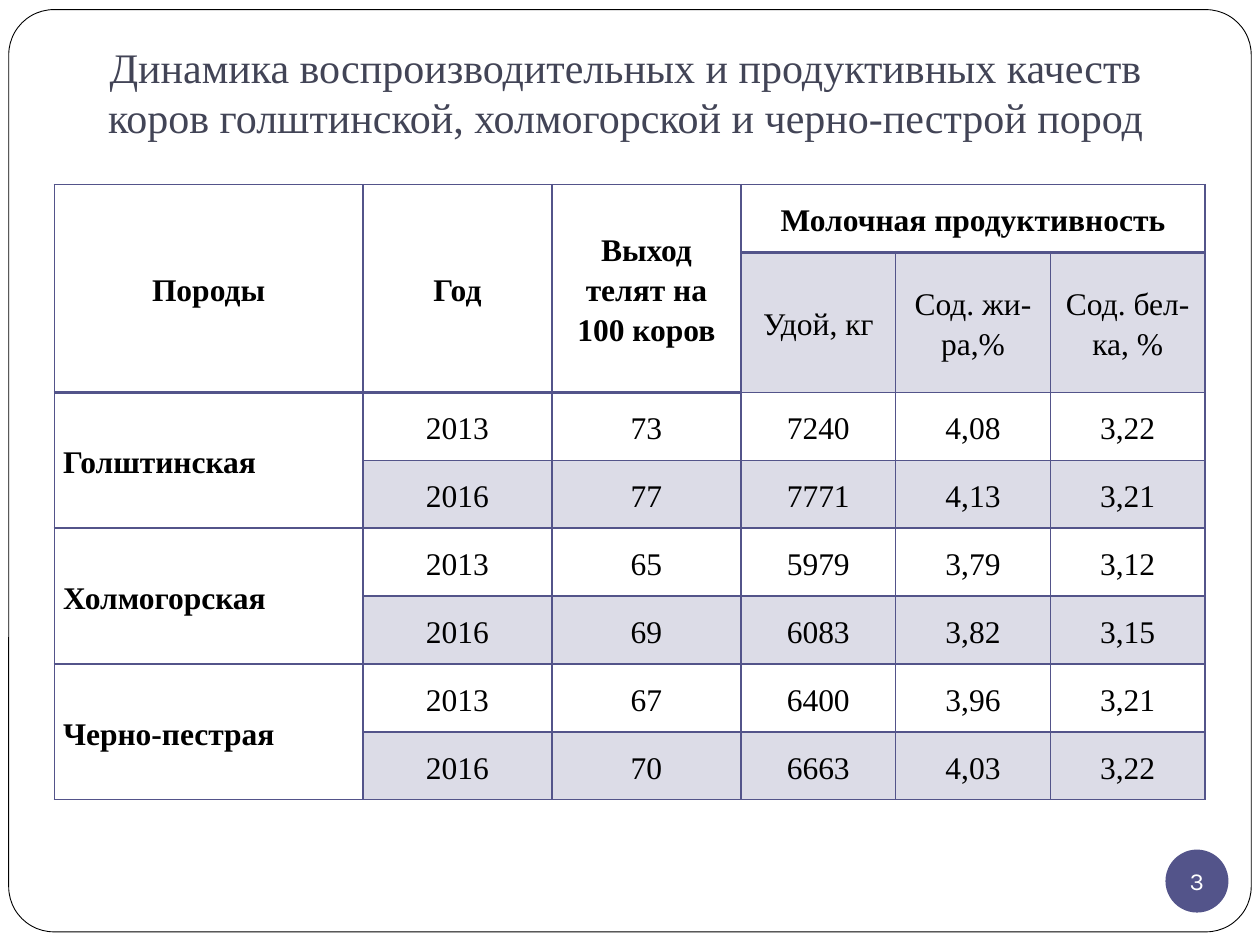
import pptx
import pptx.dml.color
import pptx.enum.shapes
import pptx.enum.text
import pptx.oxml.ns
import pptx.util
import lxml.etree

Pt = pptx.util.Pt
RGB = pptx.dml.color.RGBColor.from_string
ALIGN = pptx.enum.text.PP_ALIGN
ANCHOR = pptx.enum.text.MSO_ANCHOR
SHAPE = pptx.enum.shapes.MSO_SHAPE
qn = pptx.oxml.ns.qn

THEME = {
    "accent": "53548A", "title": "424456", "text": "000000", "paper": "FFFFFF",
    "serif": "Times New Roman", "number_font": "Karla",
    "title_size": 24, "table_size": 18, "number_size": 14,
    "band_alpha": 20, "thin": 1, "thick": 2,
}


def style(paragraph, font, size, color, align, bold=False):
    paragraph.alignment = align
    paragraph.font.name = THEME[font]
    paragraph.font.size = Pt(THEME[size])
    paragraph.font.color.rgb = RGB(THEME[color])
    paragraph.font.bold = bold


def add_border(cell, side, width):
    line = lxml.etree.SubElement(cell._tc.get_or_add_tcPr(), qn("a:" + side), w=str(Pt(width)))
    fill = lxml.etree.SubElement(line, qn("a:solidFill"))
    lxml.etree.SubElement(fill, qn("a:srgbClr"), val=THEME["accent"])


deck = pptx.Presentation()
deck.slide_width, deck.slide_height = Pt(720), Pt(540)
slide = deck.slides.add_slide(deck.slide_layouts[5])

# Rounded page frame, behind everything
frame = slide.shapes.add_shape(SHAPE.ROUNDED_RECTANGLE, Pt(5), Pt(5.5), Pt(710), Pt(527))
frame.adjustments[0] = 0.049
frame.shadow.inherit = False
frame.fill.solid()
frame.fill.fore_color.rgb = RGB(THEME["paper"])
frame.line.color.rgb = RGB(THEME["text"])
frame.line.width = Pt(0.5)
slide.shapes._spTree.insert(2, frame._element)

# Title
title = slide.shapes.title
title.left, title.top, title.width, title.height = Pt(31), Pt(15), Pt(653), Pt(73.5)
heading = title.text_frame
heading.text = ("Динамика воспроизводительных и продуктивных качеств "
                "коров голштинской, холмогорской и черно-пестрой пород")
heading.auto_size = pptx.enum.text.MSO_AUTO_SIZE.NONE
heading.vertical_anchor = ANCHOR.BOTTOM
heading.margin_bottom = Pt(7.2)
style(heading.paragraphs[0], "serif", "title_size", "title", ALIGN.CENTER)

# Slide number badge
badge = slide.shapes.add_shape(SHAPE.OVAL, Pt(666), Pt(485.5), Pt(36), Pt(36))
badge.shadow.inherit = False
badge.fill.solid()
badge.fill.fore_color.rgb = RGB(THEME["accent"])
badge.line.fill.background()
number = badge.text_frame
number.margin_left = number.margin_right = number.margin_top = number.margin_bottom = 0
number.word_wrap = False
number.vertical_anchor = ANCHOR.MIDDLE
number.text = "3"
style(number.paragraphs[0], "number_font", "number_size", "paper", ALIGN.CENTER)

# Table content; None is covered by a merged cell
records = [
    ["Породы", "Год", "Выход телят на 100 коров", "Молочная продуктивность", None, None],
    [None, None, None, "Удой, кг", "Сод. жи-ра,%", "Сод. бел- ка, %"],
    ["Голштинская", "2013", "73", "7240", "4,08", "3,22"],
    [None, "2016", "77", "7771", "4,13", "3,21"],
    ["Холмогорская", "2013", "65", "5979", "3,79", "3,12"],
    [None, "2016", "69", "6083", "3,82", "3,15"],
    ["Черно-пестрая", "2013", "67", "6400", "3,96", "3,21"],
    [None, "2016", "70", "6663", "4,03", "3,22"],
]
column_widths = [176.4, 108, 108, 88.4, 88.4, 88.4]
row_heights = [38.8, 80] + [38.8] * 6

herd = slide.shapes.add_table(len(records), len(column_widths), Pt(31), Pt(105.5),
                              Pt(sum(column_widths)), Pt(sum(row_heights))).table
herd.first_row = herd.horz_banding = False
for column, width in zip(herd.columns, column_widths):
    column.width = Pt(width)
for row, height in zip(herd.rows, row_heights):
    row.height = Pt(height)

# Merged headings and breed names
for column in range(3):
    herd.cell(0, column).merge(herd.cell(1, column))
herd.cell(0, 3).merge(herd.cell(0, 5))
for row in (2, 4, 6):
    herd.cell(row, 0).merge(herd.cell(row + 1, 0))

# The thick rule runs under the headings: row 1 on the left, row 0 on the right
for r, record in enumerate(records):
    for c, value in enumerate(record):
        cell = herd.cell(r, c)
        heading_end = 1 if c < 3 else 0
        add_border(cell, "lnL", THEME["thin"])
        add_border(cell, "lnR", THEME["thin"])
        add_border(cell, "lnT", THEME["thick" if r == heading_end + 1 else "thin"])
        add_border(cell, "lnB", THEME["thick" if r == heading_end else "thin"])
        if value is None or r % 2 == 0:
            cell.fill.background()
        else:
            cell.fill.solid()
            cell.fill.fore_color.rgb = RGB(THEME["accent"])
            tint = cell._tc.tcPr.find(qn("a:solidFill")).find(qn("a:srgbClr"))
            lxml.etree.SubElement(tint, qn("a:alpha"), val=str(THEME["band_alpha"] * 1000))
        if value is None:
            continue
        cell.text = value
        cell.vertical_anchor = ANCHOR.MIDDLE
        cell.margin_left = cell.margin_right = Pt(5)
        cell.margin_top = cell.margin_bottom = 0
        paragraph = cell.text_frame.paragraphs[0]
        paragraph.line_spacing = 1.15
        is_breed = c == 0 and r > 0
        style(paragraph, "serif", "table_size", "text",
              ALIGN.LEFT if is_breed else ALIGN.CENTER, bold=r == 0 or is_breed)

deck.save("out.pptx")
